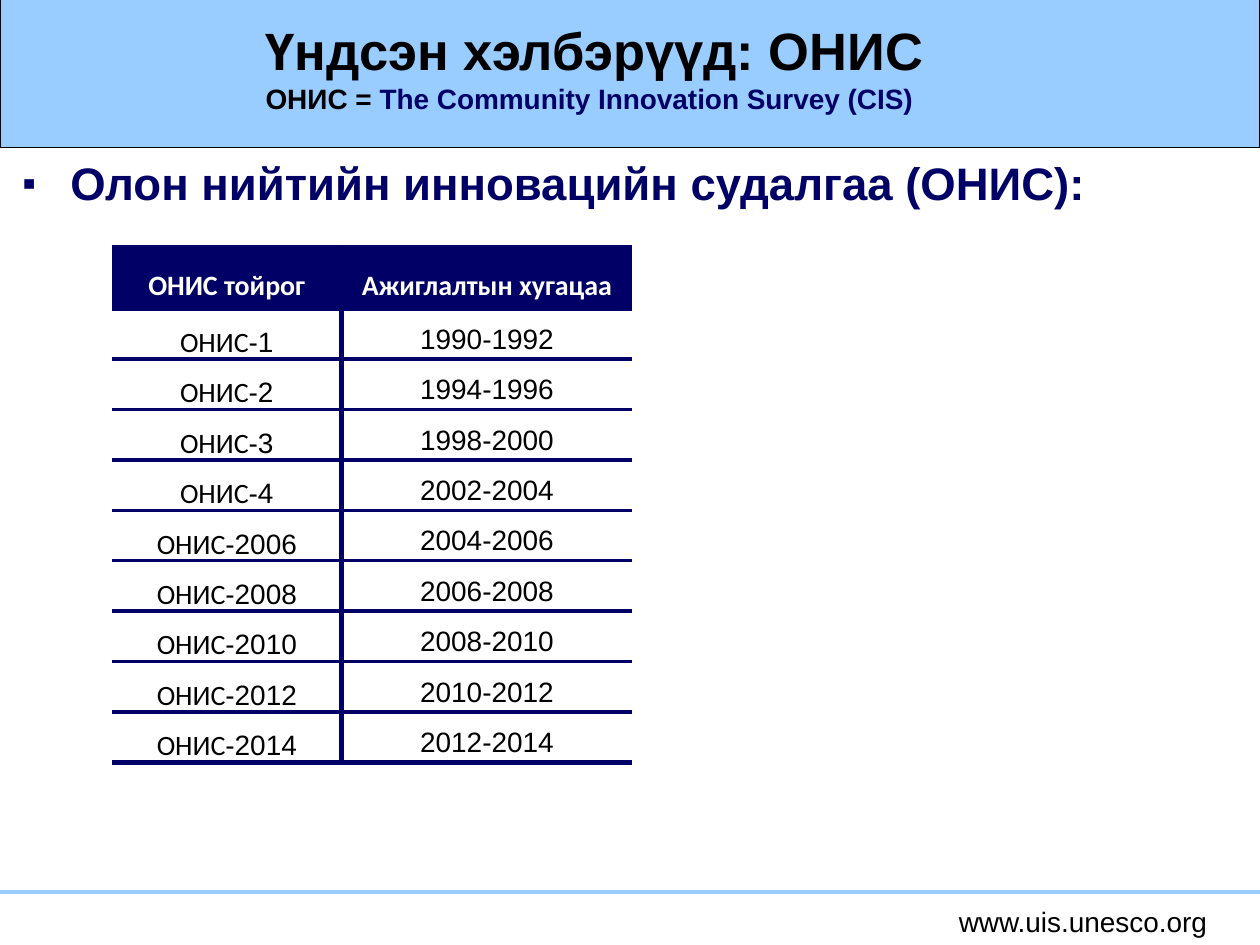
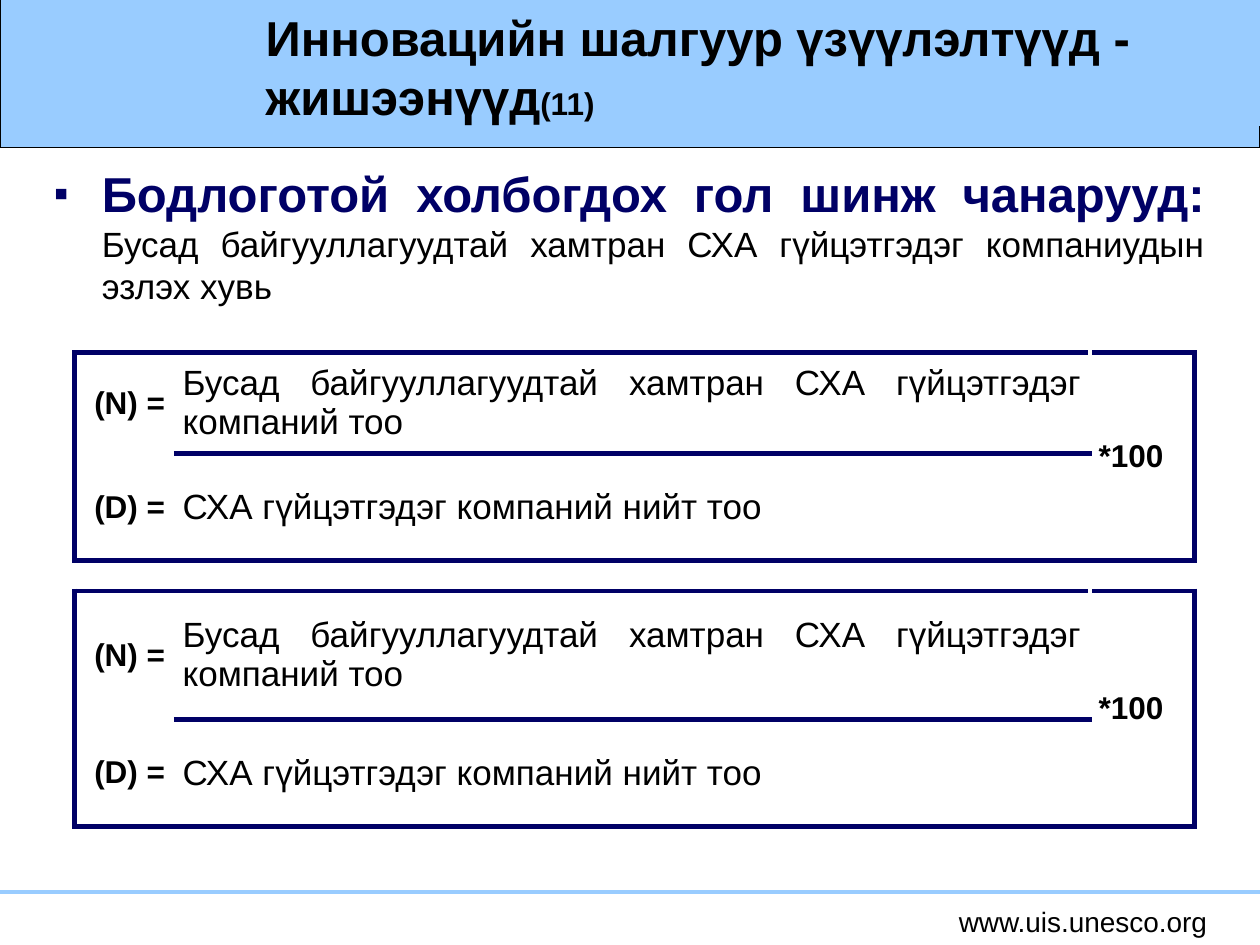
from lxml.etree import SubElement
from pptx import Presentation
from pptx.dml.color import RGBColor
from pptx.enum.shapes import MSO_CONNECTOR, MSO_SHAPE
from pptx.enum.text import MSO_ANCHOR, PP_ALIGN
from pptx.oxml.ns import qn
from pptx.util import Emu, Inches, Pt

# Shared colours and fonts
NAVY, SKY, BLACK, WHITE = "000066", "99CCFF", "000000", "FFFFFF"
SANS, HUMAN = "Arial", "Calibri"
LEFT, RIGHT, MID, JUST = (PP_ALIGN.LEFT, PP_ALIGN.RIGHT, PP_ALIGN.CENTER,
                          PP_ALIGN.JUSTIFY)
COLS = 100  # square grid: 100 columns across, 75 rows down


def paint(code):
    return RGBColor.from_string(code)


def run(text, size, color=BLACK, bold=False, face=SANS):
    return text, (size, color, bold, face)


def style(font, look):
    size, color, font.bold, font.name = look
    font.size = Pt(size)
    font.color.rgb = paint(color)


class Deck:
    def __init__(self):
        self.show = Presentation()
        self.show.slide_width, self.show.slide_height = Inches(10), Inches(7.5)
        self.unit = self.show.slide_width / COLS
        self.slide = None

    def grid(self, *cells):
        return [Emu(round(cell * self.unit)) for cell in cells]

    def page(self, width, paras):
        """Start a slide with its band, footer and title."""
        self.slide = self.show.slides.add_slide(self.show.slide_layouts[6])
        self.band(0, -0.8, COLS, 12.5)
        self.rule(70.8)
        self.text(75, 71.3, 21.9, 3.7, [[run("www.uis.unesco.org", 16)]],
                  MID, wrap=False)
        frame = self.text(20.1, 0, width, 10, paras, fill=SKY)
        frame.vertical_anchor = MSO_ANCHOR.MIDDLE
        frame.margin_top, frame.margin_bottom = self.grid(0.8, 0.2)

    def band(self, *area):
        shape = self.slide.shapes.add_shape(MSO_SHAPE.RECTANGLE,
                                            *self.grid(*area))
        shape.shadow.inherit = False
        shape.fill.solid()
        shape.fill.fore_color.rgb = paint(SKY)
        shape.line.color.rgb = paint(BLACK)
        shape.line.width = Pt(0.75)

    def rule(self, row):
        line = self.slide.shapes.add_connector(
            MSO_CONNECTOR.STRAIGHT, *self.grid(0, row, COLS, row))
        line.line.color.rgb = paint(SKY)
        line.line.width = Pt(2.25)
        SubElement(line._element.spPr, qn("a:effectLst"))

    def put(self, frame, paras, align, space=None, mark=False):
        for num, runs in enumerate(paras):
            para = frame.add_paragraph() if num else frame.paragraphs[0]
            para.alignment = align
            if space:
                para.line_spacing = space
            if mark:
                self.bullet(para)
            same = len({look for _, look in runs}) == 1
            if same:
                style(para.font, runs[0][1])
            for words, look in runs:
                part = para.add_run()
                part.text = words
                if not same:
                    style(part.font, look)

    def bullet(self, para):
        props = para._p.get_or_add_pPr()
        props.set("marL", str(Inches(0.38)))
        props.set("indent", str(-Inches(0.38)))
        color = SubElement(props, qn("a:buClr"))
        SubElement(color, qn("a:srgbClr"), val=NAVY)
        SubElement(props, qn("a:buSzPct"), val="85000")
        SubElement(props, qn("a:buFont"), typeface=SANS)
        SubElement(props, qn("a:buChar"), char="▪")

    def text(self, x, y, w, h, paras, align=LEFT, fill=None, wrap=True,
             space=None, mark=False):
        box = self.slide.shapes.add_textbox(*self.grid(x, y, w, h))
        frame = box.text_frame
        frame.word_wrap = wrap
        if fill:
            box.fill.solid()
            box.fill.fore_color.rgb = paint(fill)
        self.put(frame, paras, align, space, mark)
        return frame

    def table(self, x, y, cols, rows, head=False):
        """Add a bare table of the given column and row sizes."""
        area = self.grid(x, y, sum(cols), sum(rows))
        table = self.slide.shapes.add_table(len(rows), len(cols), *area).table
        table.first_row, table.horz_banding = head, False
        for col, size in zip(table.columns, self.grid(*cols)):
            col.width = size
        for row, size in zip(table.rows, self.grid(*rows)):
            row.height = size
        return table

    def cell(self, cell, runs, align, edges, pad, fill=None, top=False,
             space=None):
        """Fill a cell; edges maps L, R, T, B to (colour, points)."""
        cell.margin_left, cell.margin_right = self.grid(pad, pad)
        cell.margin_top = cell.margin_bottom = 0
        cell.vertical_anchor = MSO_ANCHOR.TOP if top else MSO_ANCHOR.MIDDLE
        props = cell._tc.get_or_add_tcPr()
        for side in "LRTB":
            color, width = edges.get(side, (None, 0))
            line = SubElement(props, qn("a:ln" + side), w=str(Pt(width)))
            if color:
                solid = SubElement(line, qn("a:solidFill"))
                SubElement(solid, qn("a:srgbClr"), val=color)
            else:
                SubElement(line, qn("a:noFill"))
        if fill:
            cell.fill.solid()
            cell.fill.fore_color.rgb = paint(fill)
        else:
            cell.fill.background()
        if runs:
            self.put(cell.text_frame, [runs], align, space)

    def rounds(self, x, y, heads, data):
        """Two-column list of survey rounds and their periods."""
        table = self.table(x, y, [18.2, 23.1], [4.9] + [4] * len(data), True)
        thick, thin = (NAVY, 3), (NAVY, 2.25)
        last = len(data)
        for row in range(last + 1):
            if row:
                tail, years = data[row - 1]
                pair = [[run("ОНИС", 16, face=HUMAN), run(tail, 16)],
                        [run(years, 16)]]
            else:
                pair = [[run(name, 16, WHITE, True, HUMAN)] for name in heads]
            edges = {"T": thick if row < 2 else thin,
                     "B": thick if row in (0, last) else thin}
            for col, runs in enumerate(pair):
                self.cell(table.cell(row, col), runs, MID,
                          {**edges, "LR"[1 - col]: thick}, 0.5,
                          None if row else NAVY, row > 0, 1.5)

    def ratio(self, y, high, above, below):
        """Framed fraction: numerator over denominator, times 100."""
        table = self.table(5.9, y, [7.9, 72.7, 8.3], [high, 8.5])
        table.cell(0, 2).merge(table.cell(1, 2))
        dark, pale = (NAVY, 3), (WHITE, 3)
        lines = [("(N) =", above, "T"), ("(D) =", below, "B")]
        for row, (label, words, side) in enumerate(lines):
            parts = [
                ([run(label, 18, bold=True)], RIGHT, {"L": dark, side: dark}),
                ([run(words, 20)], JUST, {"T": dark, "R": pale, "B": dark}),
                ([] if row else [run("*100", 18, bold=True)], LEFT,
                 {"L": pale, "T": dark, "R": dark, "B": dark})]
            for col, (runs, align, edges) in enumerate(parts):
                self.cell(table.cell(row, col), runs, align, edges, 0.7)


def main():
    deck = Deck()

    # Survey rounds
    deck.page(77.4, [
        [run("Үндсэн хэлбэрүүд: ОНИС", 30, bold=True)],
        [run("ОНИС = ", 16, bold=True),
         run("The Community Innovation Survey (CIS)", 16, NAVY, True)]])
    deck.text(0.8, 12.3, 98, 7.1,
              [[run("Олон нийтийн инновацийн судалгаа (ОНИС):", 26, NAVY,
                    True)]], JUST, WHITE, space=0.9, mark=True)
    first = [("-1", "1990-1992"), ("-2", "1994-1996"),
             ("-3", "1998-2000"), ("-4", "2002-2004")]
    later = [(f"-{year}", f"{year - 2}-{year}")
             for year in range(2006, 2015, 2)]
    deck.rounds(8.9, 19.6, ["ОНИС тойрог", "Ажиглалтын хугацаа"],
                first + later)

    # Indicator ratios
    deck.page(79.9, [[
        run("Инновацийн шалгуур үзүүлэлтүүд - жишээнүүд", 28, bold=True),
        run("(11)", 18, bold=True)]])
    deck.text(3.3, 12.5, 93.3, 14, [[
        run("Бодлоготой холбогдох гол шинж чанарууд: ", 28, NAVY, True),
        run("Бусад байгууллагуудтай хамтран СХА гүйцэтгэдэг компаниудын "
            "эзлэх хувь", 20)]], JUST, mark=True)
    for y, high in [(28, 8), (46.9, 10.2)]:
        deck.ratio(y, high,
                   "Бусад байгууллагуудтай хамтран СХА гүйцэтгэдэг "
                   "компаний тоо", "СХА гүйцэтгэдэг компаний нийт тоо")

    deck.show.save("out.pptx")


if __name__ == "__main__":
    main()
